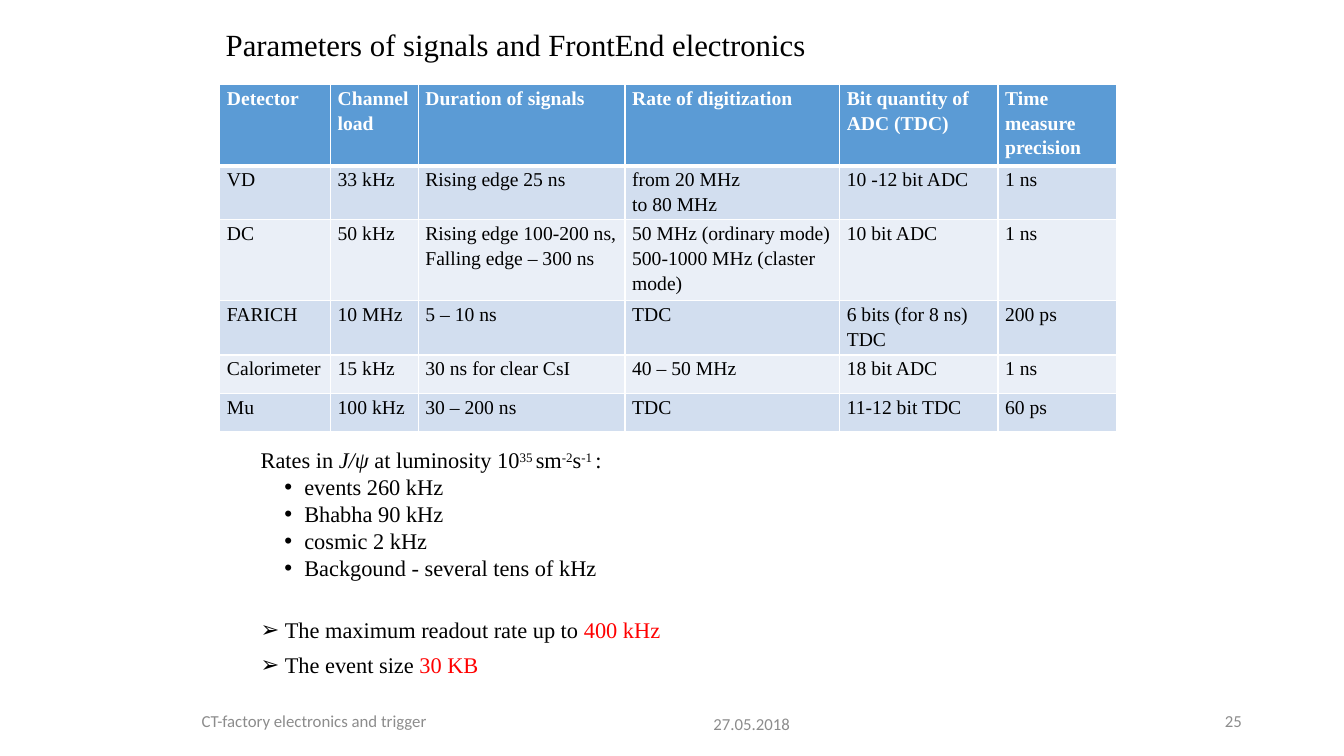
"""Build the slide on signal parameters and FrontEnd electronics."""
from lxml.etree import SubElement
from pptx import Presentation
from pptx.dml.color import RGBColor
from pptx.enum.text import MSO_ANCHOR, PP_ALIGN
from pptx.oxml.ns import qn
from pptx.util import Cm, Pt

BLACK = RGBColor(0x00, 0x00, 0x00)
WHITE = RGBColor(0xFF, 0xFF, 0xFF)
GREY = RGBColor(0x8C, 0x8C, 0x8C)
RED = RGBColor(0xFF, 0x00, 0x00)
HEADER_BLUE = RGBColor(0x5B, 0x9B, 0xD5)
BANDS = [RGBColor(0xEA, 0xEF, 0xF7), RGBColor(0xD2, 0xDE, 0xEF)]
SERIF = "Times New Roman"
SANS = "Calibri"

TITLE = "Parameters of signals and FrontEnd electronics"
TITLE_BOX = (5.44, 0.58, 22.86, 1.19)

TABLE_ORIGIN = (5.54, 2.13)
COLUMN_WIDTHS = [2.79, 2.21, 5.21, 5.41, 3.99, 3.0]
ROW_HEIGHTS = [1.88, 1.25, 1.88, 1.25, 0.97, 0.97]
TABLE_ROWS = [
    ["Detector", "Channel load", "Duration of signals", "Rate of digitization",
     "Bit quantity of ADC (TDC)", "Time measure precision"],
    ["VD", "33 kHz", "Rising edge 25 ns", "from 20 MHz\nto 80 MHz", "10 -12 bit ADC", "1 ns"],
    ["DC", "50 kHz", "Rising edge 100-200 ns, Falling edge – 300 ns",
     "50 MHz (ordinary mode)\n500-1000 MHz (claster mode)", "10 bit ADC", "1 ns"],
    ["FARICH", "10 MHz", "5 – 10 ns", "TDC", "6 bits (for 8 ns) TDC", "200 ps"],
    ["Calorimeter", "15 kHz", "30 ns for clear CsI", "40 – 50 MHz", "18 bit ADC", "1 ns"],
    ["Mu", "100 kHz", "30 – 200 ns", "TDC", "11-12 bit TDC", "60 ps"],
]

RATES_BOX = (6.32, 11.13, 21.0, 6.15)
RATES_HEADING = [
    ("Rates in ", {}), ("J/ψ ", {"italic": True}), ("at luminosity 10", {}),
    ("35 ", {"raised": True}), ("sm", {}), ("-2", {"raised": True}),
    ("s", {}), ("-1 ", {"raised": True}), (":", {}),
]
RATES = ["events 260 kHz", "Bhabha 90 kHz", "cosmic 2 kHz", "Backgound - several tens of kHz"]
CONCLUSIONS = [("The maximum readout rate up to ", "400 kHz"), ("The event size ", "30 KB")]

FOOTERS = [
    ("27.05.2018", (17.73, 17.73, 2.97, 1.02), PP_ALIGN.LEFT),
    ("CT-factory electronics and trigger", (4.83, 17.65, 10.11, 1.02), PP_ALIGN.LEFT),
    ("25", (23.93, 17.65, 7.62, 1.02), PP_ALIGN.RIGHT),
]


def add_text(paragraph, text, size=16, font=SERIF, color=BLACK, bold=False,
             italic=False, raised=False):
    """Append one formatted run to a paragraph."""
    run = paragraph.add_run()
    run.text = text
    run.font.size = Pt(size)
    run.font.name = font
    run.font.color.rgb = color
    run.font.bold = bold
    run.font.italic = italic
    if raised:
        run._r.get_or_add_rPr().set("baseline", "30000")


def add_box(slide, bounds, anchor):
    """Add a wrapping text box and return its text frame."""
    frame = slide.shapes.add_textbox(*map(Cm, bounds)).text_frame
    frame.word_wrap = True
    frame.vertical_anchor = anchor
    return frame


def set_bullet(paragraph, symbol, margin, hanging):
    """Give a paragraph a bullet with a hanging indent."""
    properties = paragraph._p.get_or_add_pPr()
    properties.set("marL", str(Cm(margin)))
    properties.set("indent", str(-Cm(hanging)))
    SubElement(properties, qn("a:buFont"), typeface="Arial")
    SubElement(properties, qn("a:buChar"), char=symbol)


def set_borders(cell, top, bottom):
    """Draw white borders, with the top and bottom widths in points."""
    properties = cell._tc.get_or_add_tcPr()
    for side, width in {"L": 1, "R": 1, "T": top, "B": bottom}.items():
        line = SubElement(properties, qn(f"a:ln{side}"), w=str(Pt(width)))
        fill = SubElement(line, qn("a:solidFill"))
        SubElement(fill, qn("a:srgbClr"), val=str(WHITE))


def add_detector_table(slide):
    """Add the banded table of detector parameters."""
    size = (sum(COLUMN_WIDTHS), sum(ROW_HEIGHTS))
    table = slide.shapes.add_table(
        len(ROW_HEIGHTS), len(COLUMN_WIDTHS), *map(Cm, TABLE_ORIGIN + size)).table
    for column, width in zip(table.columns, COLUMN_WIDTHS):
        column.width = Cm(width)
    for index, (row, height, texts) in enumerate(zip(table.rows, ROW_HEIGHTS, TABLE_ROWS)):
        row.height = Cm(height)
        header = index == 0
        for cell, text in zip(row.cells, texts):
            cell.margin_left = cell.margin_right = Cm(0.18)
            cell.margin_top = cell.margin_bottom = 0
            set_borders(cell, top=3 if index == 1 else 1, bottom=3 if header else 1)
            cell.fill.solid()
            cell.fill.fore_color.rgb = HEADER_BLUE if header else BANDS[index % 2]
            for number, line in enumerate(text.split("\n")):
                frame = cell.text_frame
                paragraph = frame.add_paragraph() if number else frame.paragraphs[0]
                paragraph.line_spacing = 1.15
                add_text(paragraph, line, size=14, bold=header,
                         color=WHITE if header else BLACK)


def add_rates(slide):
    """Add the event rates and the conclusions below the table."""
    frame = add_box(slide, RATES_BOX, MSO_ANCHOR.TOP)
    for text, style in RATES_HEADING:
        add_text(frame.paragraphs[0], text, **style)
    for rate in RATES:
        paragraph = frame.add_paragraph()
        set_bullet(paragraph, "•", margin=1.1, hanging=0.5)
        add_text(paragraph, rate)
    for index, (label, value) in enumerate(CONCLUSIONS):
        paragraph = frame.add_paragraph()
        paragraph.space_before = Pt(0 if index else 25)
        paragraph.space_after = Pt(6)
        set_bullet(paragraph, "➢", margin=0.61, hanging=0.61)
        add_text(paragraph, label)
        add_text(paragraph, value, color=RED)


def main():
    """Create and save the presentation."""
    presentation = Presentation()
    presentation.slide_width = Cm(33.87)
    presentation.slide_height = Cm(19.05)
    slide = presentation.slides.add_slide(presentation.slide_layouts[6])
    title = add_box(slide, TITLE_BOX, MSO_ANCHOR.MIDDLE).paragraphs[0]
    title.line_spacing = 0.9
    add_text(title, TITLE, size=22)
    for text, bounds, alignment in FOOTERS:
        paragraph = add_box(slide, bounds, MSO_ANCHOR.MIDDLE).paragraphs[0]
        paragraph.alignment = alignment
        add_text(paragraph, text, size=12, font=SANS, color=GREY)
    add_detector_table(slide)
    add_rates(slide)
    presentation.save("out.pptx")


if __name__ == "__main__":
    main()
